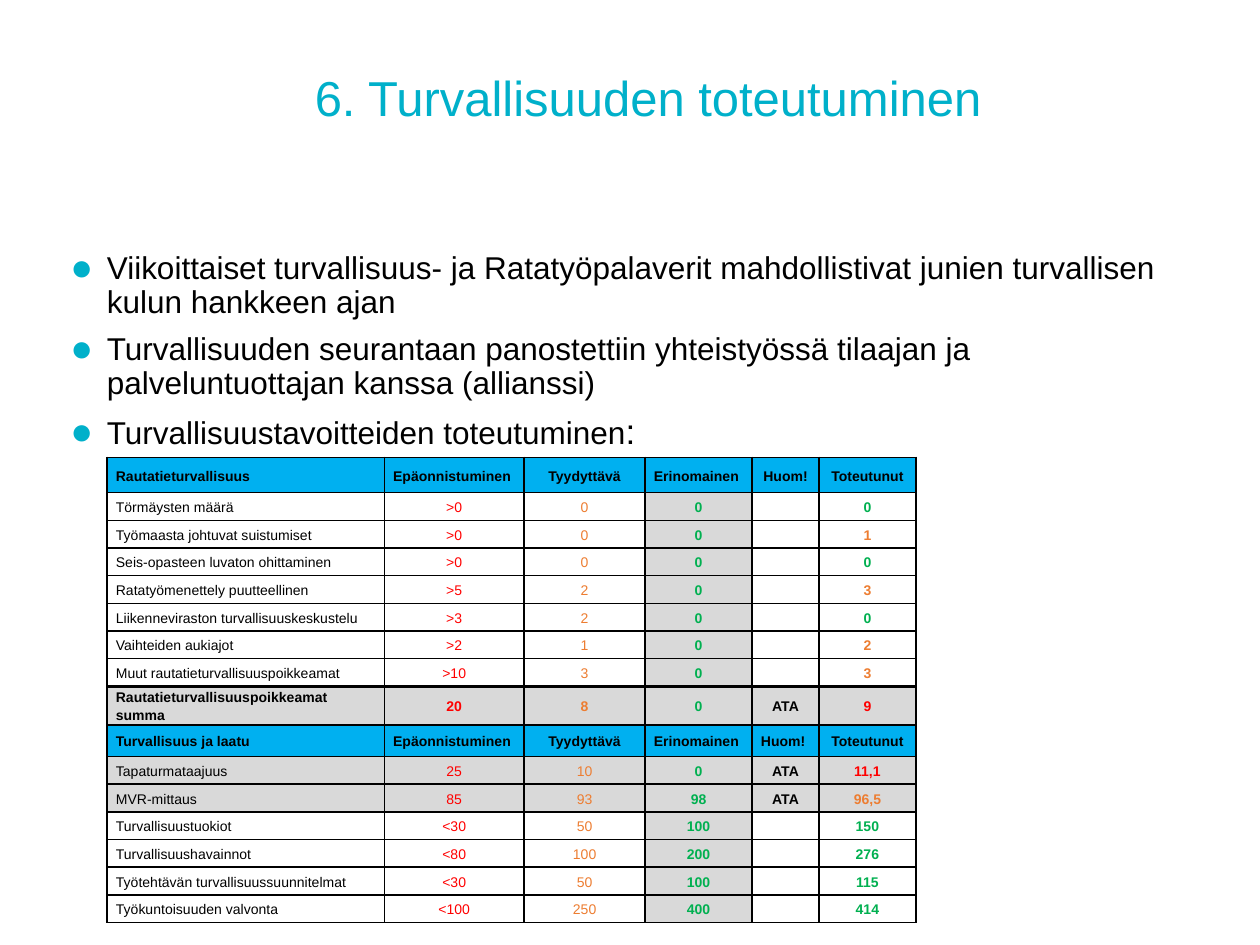
"""Build the slide on how the safety targets were met."""
from lxml import etree
from pptx import Presentation
from pptx import util as u
from pptx.dml.color import RGBColor
from pptx.enum import text
from pptx.oxml.ns import qn

INK, TEAL, BLUE, GREY = "000000", "00B0CA", "00B0F0", "D9D9D9"
RED, AMBER, GREEN = "FF0000", "ED7D31", "00B050"
MID = text.MSO_ANCHOR.MIDDLE


def tint(code):
    return RGBColor.from_string(code)


def write(para, words, size, code=INK, bold=False):
    run = para.add_run()
    run.text = words
    form = {"name": "Arial", "size": u.Pt(size), "bold": bold}
    for key, val in form.items():
        setattr(run.font, key, val)
    run.font.color.rgb = tint(code)


deck = Presentation()
deck.slide_width, deck.slide_height = u.Inches(10), u.Inches(7.5)
slide = deck.slides.add_slide(deck.slide_layouts[6])

box = slide.shapes.add_textbox(*map(u.Inches, (2.4, 0.46, 7.24, 0.67)))
frame = box.text_frame
frame.word_wrap = True
frame.vertical_anchor = MID
frame.paragraphs[0].line_spacing = 0.9
write(frame.paragraphs[0], "6. Turvallisuuden toteutuminen", 28, TEAL)

points = [
    "Viikoittaiset turvallisuus- ja Ratatyöpalaverit mahdollistivat junien turvallisen kulun hankkeen ajan",
    "Turvallisuuden seurantaan panostettiin yhteistyössä tilaajan ja palveluntuottajan kanssa (allianssi)",
    "Turvallisuustavoitteiden toteutuminen",
]
box = slide.shapes.add_textbox(*map(u.Inches, (0.46, 1.95, 9.14, 4.83)))
frame = box.text_frame
frame.word_wrap = True
for i, point in enumerate(points):
    para = frame.add_paragraph() if i else frame.paragraphs[0]
    para.line_spacing = 0.9
    para.space_before = u.Pt(7.5 if i else 0)
    props = para._p.get_or_add_pPr()
    props.set("marL", str(u.Inches(0.29)))
    props.set("indent", str(-u.Inches(0.29)))
    hue = etree.SubElement(props, qn("a:buClr"))
    etree.SubElement(hue, qn("a:srgbClr"), val=TEAL)
    etree.SubElement(props, qn("a:buSzPct"), val="120000")
    etree.SubElement(props, qn("a:buFont"), typeface="Arial")
    etree.SubElement(props, qn("a:buChar"), char="●")
    write(para, point, 18)
write(para, ":", 20)

heads = ["Epäonnistuminen", "Tyydyttävä", "Erinomainen", "Huom!", "Toteutunut"]
rows = [
    ("Rautatieturvallisuus", *heads, INK),
    ("Törmäysten määrä", ">0", "0", "0", "", "0", GREEN),
    ("Työmaasta johtuvat suistumiset", ">0", "0", "0", "", "1", AMBER),
    ("Seis-opasteen luvaton ohittaminen", ">0", "0", "0", "", "0", GREEN),
    ("Ratatyömenettely puutteellinen", ">5", "2", "0", "", "3", AMBER),
    ("Liikenneviraston turvallisuuskeskustelu", ">3", "2", "0", "", "0", GREEN),
    ("Vaihteiden aukiajot", ">2", "1", "0", "", "2", AMBER),
    ("Muut rautatieturvallisuuspoikkeamat", ">10", "3", "0", "", "3", AMBER),
    ("Rautatieturvallisuuspoikkeamat summa", "20", "8", "0", "ATA", "9", RED),
    ("Turvallisuus ja laatu", *heads, INK),
    ("Tapaturmataajuus", "25", "10", "0", "ATA", "11,1", RED),
    ("MVR-mittaus", "85", "93", "98", "ATA", "96,5", AMBER),
    ("Turvallisuustuokiot", "<30", "50", "100", "", "150", GREEN),
    ("Turvallisuushavainnot", "<80", "100", "200", "", "276", GREEN),
    ("Työtehtävän turvallisuussuunnitelmat", "<30", "50", "100", "", "115", GREEN),
    ("Työkuntoisuuden valvonta", "<100", "250", "400", "", "414", GREEN),
]
wide = [2.2, 1.11, 0.96, 0.85, 0.53, 0.77]
tops, sum_row = (0, 9), 8
spot = map(u.Inches, (0.85, 3.63, sum(wide), 3.69))
table = slide.shapes.add_table(len(rows), len(wide), *spot).table
table.first_row = table.horz_banding = False
for col, width in zip(table.columns, wide):
    col.width = u.Inches(width)

for r, (*words, mark) in enumerate(rows):
    head = r in tops
    table.rows[r].height = u.Inches({0: 0.28, 9: 0.25}.get(r, 0.22))
    hues = [INK] * 6 if head else [INK, RED, AMBER, GREEN, INK, mark]
    for c, word in enumerate(words):
        cell = table.cell(r, c)
        form = {"margin_left": u.Inches(0.07), "margin_right": u.Inches(0.07),
                "margin_top": 0, "margin_bottom": 0, "vertical_anchor": MID}
        for key, val in form.items():
            setattr(cell, key, val)
        props = cell._tc.get_or_add_tcPr()
        for side in "LRTB":
            thick = (r, side) in ((sum_row, "T"), (sum_row - 1, "B"))
            line = etree.SubElement(props, qn("a:ln" + side), w=str(u.Pt(1.5 if thick else 1)))
            fill = etree.SubElement(line, qn("a:solidFill"))
            etree.SubElement(fill, qn("a:srgbClr"), val=INK)
        if head or c == 3 or words[4] == "ATA":
            cell.fill.solid()
            cell.fill.fore_color.rgb = tint(BLUE if head else GREY)
        else:
            cell.fill.background()
        para = cell.text_frame.paragraphs[0]
        para.line_spacing = 1.15
        left = c == 0 or head and c in (1, 3) or (r, c) == (9, 4)
        para.alignment = text.PP_ALIGN.LEFT if left else text.PP_ALIGN.CENTER
        if word:
            write(para, word, 8, hues[c], head or r == sum_row or c > 2)
        else:
            etree.SubElement(para._p, qn("a:endParaRPr"), sz="800")

deck.save("out.pptx")
